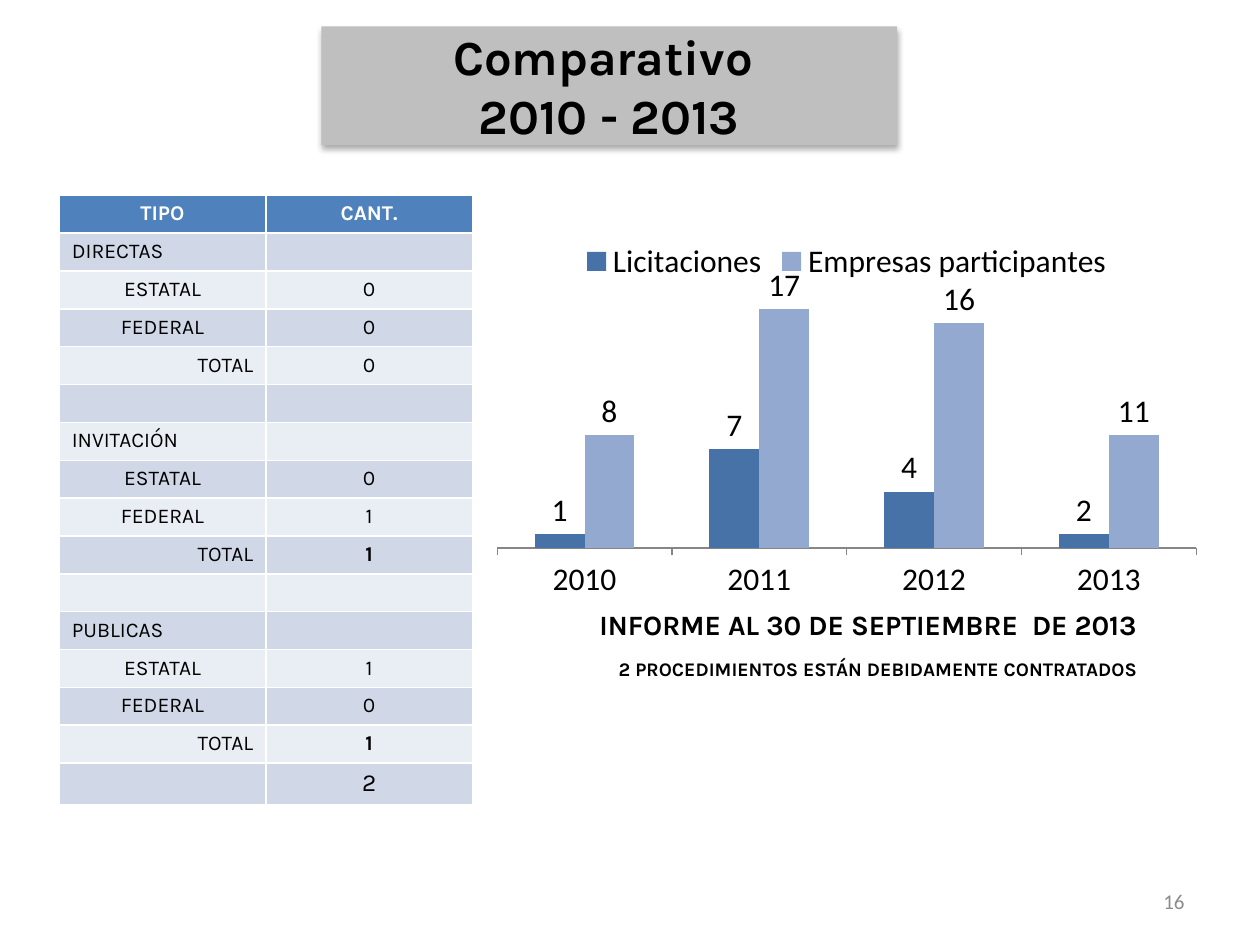
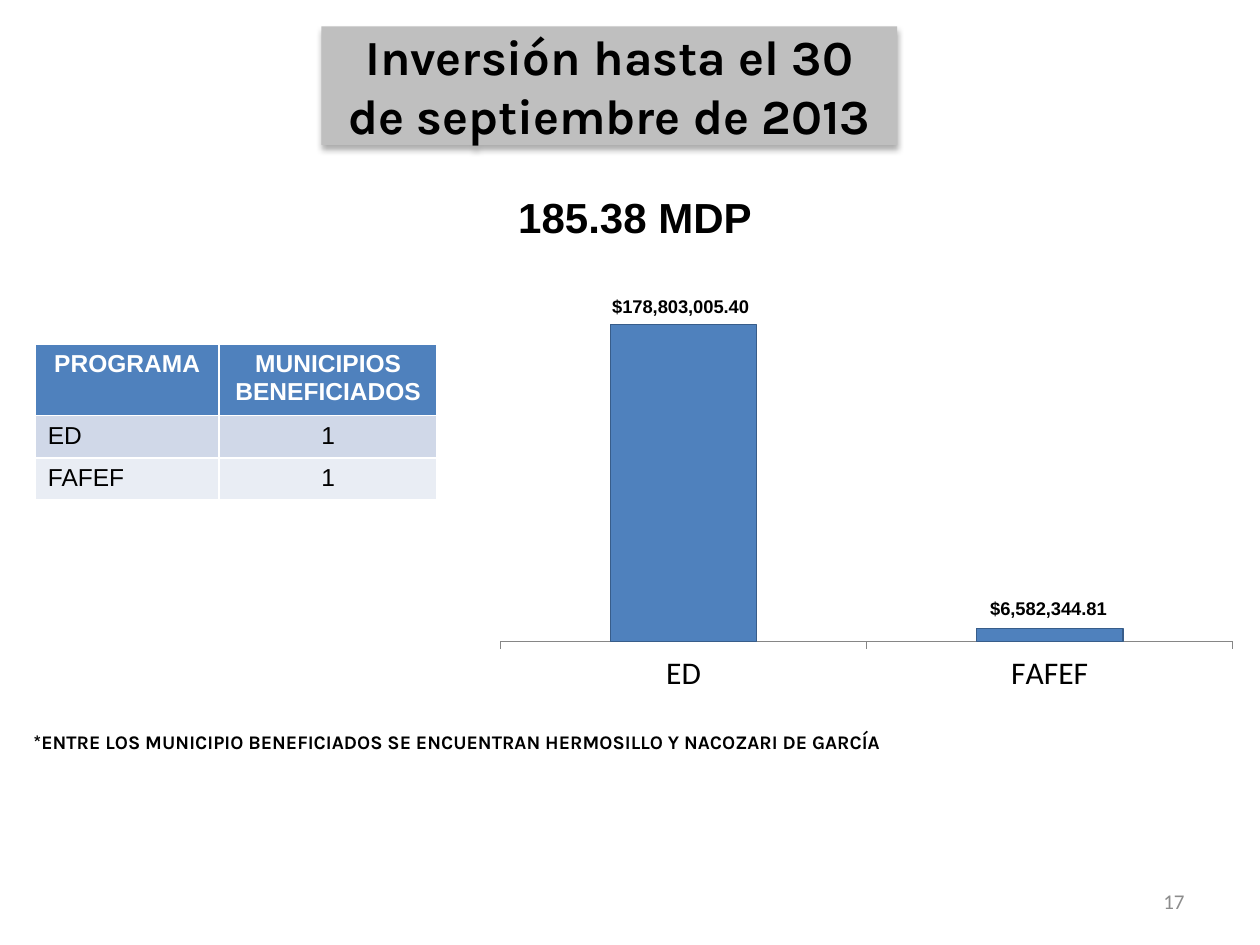
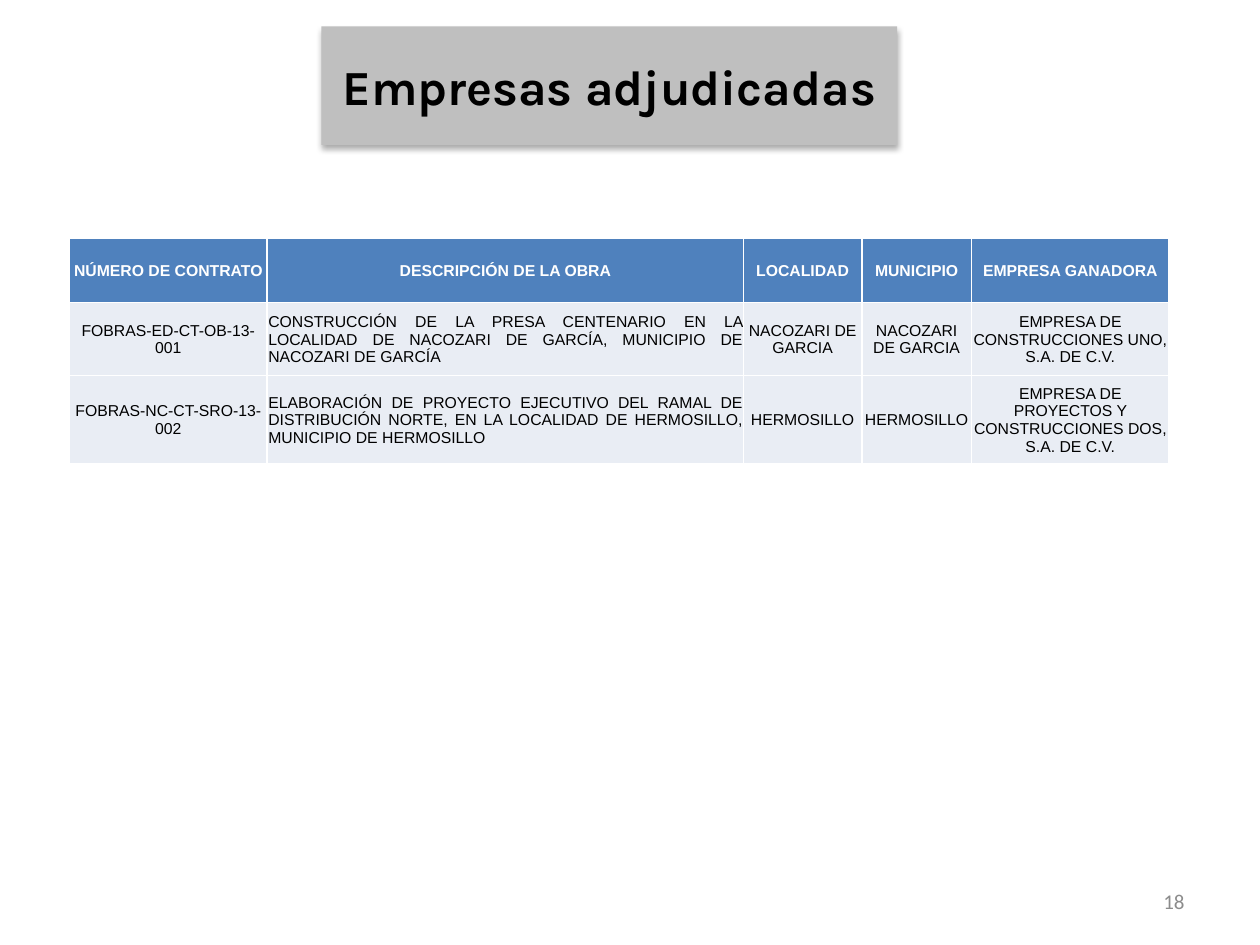
from dataclasses import dataclass

from lxml import etree
from pptx import Presentation
from pptx.chart.data import CategoryChartData
from pptx.dml.color import RGBColor
from pptx.enum.chart import XL_CHART_TYPE, XL_LABEL_POSITION, XL_LEGEND_POSITION, XL_TICK_MARK
from pptx.enum.text import MSO_ANCHOR, MSO_AUTO_SIZE, PP_ALIGN
from pptx.oxml import parse_xml
from pptx.oxml.ns import nsdecls, qn
from pptx.util import Inches, Pt

LEFT, CENTER, RIGHT, JUSTIFY = PP_ALIGN.LEFT, PP_ALIGN.CENTER, PP_ALIGN.RIGHT, PP_ALIGN.JUSTIFY
TOP, MIDDLE = MSO_ANCHOR.TOP, MSO_ANCHOR.MIDDLE
COLUMNS = XL_CHART_TYPE.COLUMN_CLUSTERED
OUTSIDE_END = XL_LABEL_POSITION.OUTSIDE_END
LEGEND_TOP = XL_LEGEND_POSITION.TOP
TICK_OUTSIDE, TICK_NONE = XL_TICK_MARK.OUTSIDE, XL_TICK_MARK.NONE

COLORS = {
    "text": "000000",
    "white": "FFFFFF",
    "title band": "BFBFBF",
    "page number": "8C8C8C",
    "header": "4F81BD",
    "dark row": "D0D8E8",
    "light row": "E9EDF4",
    "axis": "868686",
    "tenders": "4672A8",
    "bidders": "93A9CF",
    "investment": "4F81BD",
    "investment edge": "385D8A",
}
TITLE_FONT, TABLE_FONT, CHART_FONT = "Karla", "Arial", "Calibri"
TITLE_ONLY = 5


@dataclass
class Cell:
    text: str = ""
    align: PP_ALIGN = CENTER
    bold: bool = False
    size: float = 0


def color(name):
    return RGBColor.from_string(COLORS[name])


def paint(shape, name):
    shape.fill.solid()
    shape.fill.fore_color.rgb = color(name)


def style_font(font, typeface, size, bold=False, color_name="text"):
    font.name, font.size, font.bold = typeface, Pt(size), bold
    font.color.rgb = color(color_name)


def write(paragraph, text, align, *style):
    """Add one run; an empty paragraph only keeps the height of its style."""
    paragraph.alignment = align
    if text:
        run = paragraph.add_run()
        run.text = text
        style_font(run.font, *style)
    else:
        size = Pt(style[1]).centipoints
        etree.SubElement(paragraph._p, qn("a:endParaRPr"), sz=str(size))


def place(shape, left, top, width, height):
    shape.left, shape.top = Inches(left), Inches(top)
    shape.width, shape.height = Inches(width), Inches(height)


def add_text(slide, box, text, *style, align=CENTER, anchor=TOP):
    shape = slide.shapes.add_textbox(*map(Inches, box))
    frame = shape.text_frame
    frame.word_wrap, frame.vertical_anchor = True, anchor
    write(frame.paragraphs[0], text, align, *style)


def add_title(slide, lines):
    title = slide.shapes.title
    place(title, 2.55, 0.21, 4.57, 0.94)
    paint(title, "title band")
    title._element.spPr.append(parse_xml(
        f'<a:effectLst {nsdecls("a")}><a:outerShdw blurRad="{Pt(3.5)}" dist="{Pt(2.2)}" '
        'dir="5400000" rotWithShape="0"><a:srgbClr val="000000"><a:alpha val="32000"/>'
        '</a:srgbClr></a:outerShdw></a:effectLst>'))
    frame = title.text_frame
    frame.auto_size, frame.word_wrap = MSO_AUTO_SIZE.NONE, True
    frame.vertical_anchor = MIDDLE
    for index, line in enumerate(lines):
        paragraph = frame.add_paragraph() if index else frame.paragraphs[0]
        write(paragraph, line, CENTER, TITLE_FONT, 28, True)


def add_slide(presentation, number, *title_lines):
    slide = presentation.slides.add_slide(presentation.slide_layouts[TITLE_ONLY])
    add_title(slide, title_lines)
    add_text(slide, (7.17, 6.95, 2.33, 0.4), str(number), CHART_FONT, 12, False,
             "page number", align=RIGHT, anchor=MIDDLE)
    return slide


def add_table(slide, left, top, widths, heights, headings, rows, typeface, size,
              bands=("dark row", "light row"), compact=False):
    """Table with a header row; compact cells have hardly any margin."""
    frame = slide.shapes.add_table(len(heights), len(widths), Inches(left), Inches(top),
                                   Inches(sum(widths)), Inches(sum(heights)))
    table = frame.table
    for column, width in zip(table.columns, widths):
        column.width = Inches(width)
    for row, height in zip(table.rows, heights):
        row.height = Inches(height)
    for row_index, contents in enumerate([[Cell(text, bold=True) for text in headings], *rows]):
        is_header = row_index == 0
        fill = "header" if is_header else bands[(row_index - 1) % len(bands)]
        for column_index, content in enumerate(contents):
            cell = table.cell(row_index, column_index)
            paint(cell, fill)
            if compact:
                cell.vertical_anchor = MIDDLE
                cell.margin_left = cell.margin_right = cell.margin_top = Inches(0.01)
                cell.margin_bottom = 0
            write(cell.text_frame.paragraphs[0], content.text, content.align, typeface,
                  content.size or size, content.bold, "white" if is_header else "text")


def set_plot_area(chart, x, y, width, height):
    plot_area = chart._chartSpace.chart.plotArea
    for layout in plot_area.findall(qn("c:layout")):
        plot_area.remove(layout)
    parts = "".join(f'<c:{tag} val="{value}"/>' for tag, value in (
        ("layoutTarget", "inner"), ("xMode", "edge"), ("yMode", "edge"),
        ("x", x), ("y", y), ("w", width), ("h", height)))
    plot_area.insert(0, parse_xml(
        f'<c:layout {nsdecls("c")}><c:manualLayout>{parts}</c:manualLayout></c:layout>'))


def add_column_chart(slide, box, categories, series, fills, maximum, plot_area):
    data = CategoryChartData()
    data.categories = categories
    for name, values in series.items():
        data.add_series(name, values)
    chart = slide.shapes.add_chart(COLUMNS, *map(Inches, box), data).chart
    style_font(chart.font, CHART_FONT, 18)
    chart.has_title = chart.has_legend = False
    set_plot_area(chart, *plot_area)
    plot = chart.plots[0]
    plot.gap_width, plot.overlap, plot.vary_by_categories = 150, 0, False
    for one_series, fill in zip(plot.series, fills):
        paint(one_series.format, fill)
    value_axis, category_axis = chart.value_axis, chart.category_axis
    value_axis.visible = value_axis.has_major_gridlines = False
    value_axis.minimum_scale, value_axis.maximum_scale = 0, maximum
    category_axis.major_tick_mark, category_axis.minor_tick_mark = TICK_OUTSIDE, TICK_NONE
    category_axis.format.line.color.rgb = color("axis")
    return chart


def label_values(series, last_label):
    """Show the values, with a text of its own on the last column."""
    labels = series.data_labels
    labels.show_value, labels.position = True, OUTSIDE_END
    style_font(labels.font, CHART_FONT, 18)
    label = series.points[len(series.values) - 1].data_label
    write(label.text_frame.paragraphs[0], last_label, CENTER, CHART_FONT, 18)
    label.position = OUTSIDE_END


def procurement_rows(groups):
    """Rows of each kind of tender with its total, then the grand total."""
    rows = []
    for index, (kind, state, federal) in enumerate(groups):
        if index:
            rows.append([Cell(), Cell()])
        total = state + federal
        rows += [
            [Cell(kind, LEFT), Cell()],
            [Cell("ESTATAL"), Cell(str(state))],
            [Cell("FEDERAL"), Cell(str(federal))],
            [Cell("TOTAL", RIGHT), Cell(str(total), bold=total > 0)],
        ]
    grand_total = sum(state + federal for _, state, federal in groups)
    return rows + [[Cell(), Cell(str(grand_total), size=14)]]


def build_comparison(presentation):
    slide = add_slide(presentation, 16, "Comparativo ", "2010 - 2013")
    add_text(slide, (3.98, 4.77, 5.82, 0.37), "INFORME AL 30 DE SEPTIEMBRE  DE 2013",
             TITLE_FONT, 16, True)
    rows = procurement_rows([("DIRECTAS", 0, 0), ("INVITACIÓN", 0, 1), ("PUBLICAS", 1, 0)])
    add_table(slide, 0.47, 1.55, [1.64] * 2, [0.3] * len(rows) + [0.33],
              ["TIPO", "CANT."], rows, TITLE_FONT, 12)
    chart = add_column_chart(
        slide, (3.83, 1.8, 5.78, 3), ["2010", "2011", "2012", "2013"],
        {"Licitaciones": (1, 7, 4, 1), "Empresas participantes": (8, 17, 16, 8)},
        ["tenders", "bidders"], 18, (0.02, 0.18, 0.96, 0.67))
    chart.has_legend = True
    chart.legend.position, chart.legend.include_in_layout = LEGEND_TOP, False
    style_font(chart.legend.font, CHART_FONT, 18)
    for series, last_label in zip(chart.plots[0].series, ["2", "11"]):
        label_values(series, last_label)
    add_text(slide, (4.06, 5.17, 5.82, 0.29),
             "2 PROCEDIMIENTOS ESTÁN DEBIDAMENTE CONTRATADOS", TITLE_FONT, 11, True)


def build_investment(presentation):
    slide = add_slide(presentation, 17, "Inversión hasta el 30 de septiembre de 2013")
    programs = ["ED", "FAFEF"]
    chart = add_column_chart(slide, (3.66, 2.1, 6.25, 3.52), programs, {"Series 1": (100, 4)},
                             ["investment"], 112, (0.05, 0.05, 0.93, 0.8))
    edge = chart.plots[0].series[0].format.line
    edge.color.rgb, edge.width = color("investment edge"), Pt(0.75)
    for left, top, amount in [(4.76, 2.29, "$178,803,005.40"), (7.76, 4.69, "$6,582,344.81")]:
        add_text(slide, (left, top, 1.42, 0.28), amount, TABLE_FONT, 10.5, True, align=LEFT)
    add_table(slide, 0.28, 2.73, [1.46, 1.73], [0.57, 0.33, 0.33],
              ["PROGRAMA", "MUNICIPIOS BENEFICIADOS"],
              [[Cell(program, LEFT), Cell("1")] for program in programs], TABLE_FONT, 14)
    add_text(slide, (0.05, 5.75, 7.16, 0.29),
             "*ENTRE LOS MUNICIPIO BENEFICIADOS SE ENCUENTRAN HERMOSILLO Y NACOZARI DE GARCÍA",
             TITLE_FONT, 11, True)
    add_text(slide, (1.46, 1.47, 7.16, 0.5), "185.38 MDP", TABLE_FONT, 24, True)


def build_awards(presentation):
    slide = add_slide(presentation, 18, "Empresas adjudicadas")
    headings = ["NÚMERO DE CONTRATO", "DESCRIPCIÓN DE LA OBRA", "LOCALIDAD", "MUNICIPIO",
                "EMPRESA GANADORA"]
    contracts = [
        ("FOBRAS-ED-CT-OB-13-001",
         "CONSTRUCCIÓN DE LA PRESA CENTENARIO EN LA LOCALIDAD DE NACOZARI DE GARCÍA, "
         "MUNICIPIO DE NACOZARI DE GARCÍA",
         "NACOZARI DE GARCIA", "EMPRESA DE CONSTRUCCIONES UNO, S.A. DE C.V."),
        ("FOBRAS-NC-CT-SRO-13-002",
         "ELABORACIÓN DE PROYECTO EJECUTIVO DEL RAMAL DE DISTRIBUCIÓN NORTE, EN LA "
         "LOCALIDAD DE HERMOSILLO, MUNICIPIO DE HERMOSILLO",
         "HERMOSILLO", "EMPRESA DE PROYECTOS Y CONSTRUCCIONES DOS, S.A. DE C.V."),
    ]
    rows = [[Cell(number), Cell(work, JUSTIFY), Cell(town), Cell(town), Cell(winner)]
            for number, work, town, winner in contracts]
    add_table(slide, 0.55, 1.89, [1.57, 3.78, 0.94, 0.87, 1.57], [0.51, 0.58, 0.7],
              headings, rows, TABLE_FONT, 9, bands=["light row"], compact=True)


def main():
    presentation = Presentation()
    presentation.slide_width, presentation.slide_height = Inches(10), Inches(7.5)
    build_comparison(presentation)
    build_investment(presentation)
    build_awards(presentation)
    presentation.save("out.pptx")


if __name__ == "__main__":
    main()
